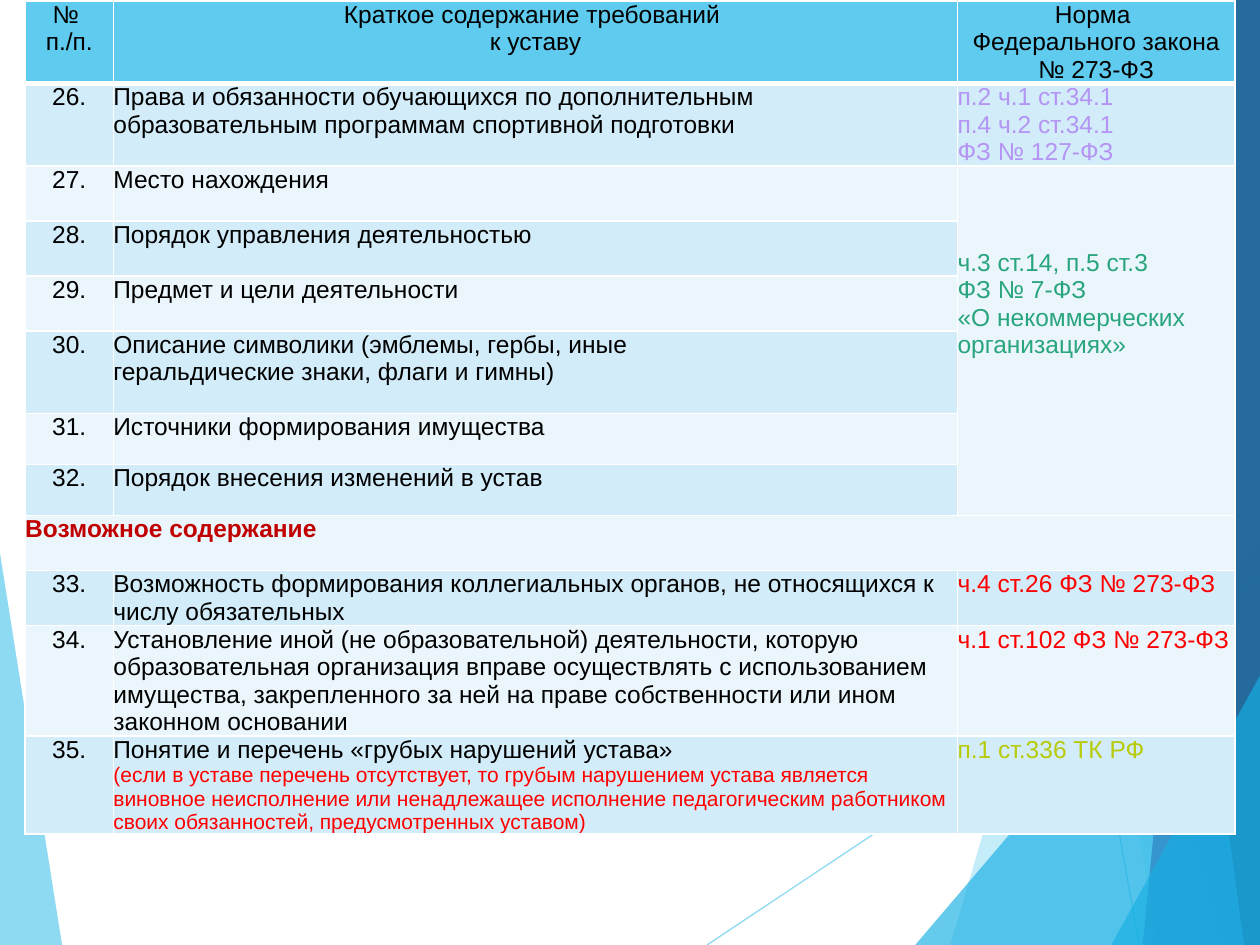
from lxml import etree
from pptx import Presentation
from pptx.dml.color import RGBColor
from pptx.enum.shapes import MSO_CONNECTOR
from pptx.enum.text import PP_ALIGN
from pptx.oxml.ns import qn
from pptx.util import Pt

CENTER, LEFT = PP_ALIGN.CENTER, PP_ALIGN.LEFT
STRAIGHT = MSO_CONNECTOR.STRAIGHT
WIDTH, HEIGHT = 720, 540
FONT = "Arial"
BLACK, WHITE, RED, DARK_RED = "000000", "FFFFFF", "FF0000", "C00000"
VIOLET, GREEN, OLIVE = "B494F4", "29A57D", "B8CA08"
SKY, AZURE, BLUE, NAVY = "5FCBEF", "17B0E4", "2E83C3", "226292"
BANDS = ("D2ECF9", "EAF6FC")
COLUMN_WIDTHS = (50.4, 482.4, 158.4)

# Facets: colour, opacity in percent, corner points
FACETS = [
    (SKY, 70, [(0, 316), (35.5, 540), (0, 540)]),
    (SKY, 36, [(702, 0), (543, 540), (720, 540), (720, 0)]),
    (SKY, 20, [(567.5, 0), (662, 540), (720, 540), (720, 0)]),
    (AZURE, 66, [(523, 540), (720, 309), (720, 540)]),
    (AZURE, 50, [(552.5, 0), (698.5, 540), (720, 540), (720, 0)]),
    (BLUE, 70, [(706, 0), (653, 540), (720, 540), (720, 0)]),
    (NAVY, 82, [(637, 0), (711, 540), (720, 540), (720, 0)]),
    (AZURE, 66, [(635, 540), (720, 386), (720, 540)]),
]
FACET_LINES = [(404, 540, 720, 329.5), (554.5, 0, 651, 540)]

# Rows: height, requirement lines, norm lines, norm colour
HEADER = (46.8, ["№ ", "п./п."], ["Краткое содержание требований ", "к уставу"],
          ["Норма ", "Федерального закона № 273-ФЗ"])
FIRST_NUMBER = 26
REQUIREMENTS = [
    (47.2, ["Права и обязанности обучающихся по дополнительным образовательным "
            "программам спортивной подготовки"],
     ["п.2 ч.1 ст.34.1", "п.4 ч.2 ст.34.1", "ФЗ № 127-ФЗ"], VIOLET),
    (31.4, ["Место нахождения"],
     ["ч.3 ст.14, п.5 ст.3", "ФЗ № 7-ФЗ", "«О некоммерческих организациях»"], GREEN),
    (31.4, ["Порядок управления деятельностью"], None, None),
    (31.4, ["Предмет и цели деятельности"], None, None),
    (47.2, ["Описание символики (эмблемы, гербы, иные ",
            "геральдические знаки, флаги и гимны)"], None, None),
    (29.2, ["Источники формирования имущества"], None, None),
    (29.2, ["Порядок внесения изменений в устав"], None, None),
    (31.4, ["Возможность формирования коллегиальных органов, не относящихся к "
            "числу обязательных"], ["ч.4 ст.26 ФЗ № 273-ФЗ"], RED),
    (62.9, ["Установление иной (не образовательной) деятельности, которую "
            "образовательная организация вправе осуществлять с использованием "
            "имущества, закрепленного за ней на праве собственности или ином "
            "законном основании"], ["ч.1 ст.102 ФЗ № 273-ФЗ"], RED),
    (56, ["Понятие и перечень «грубых нарушений устава»",
          "(если в уставе перечень отсутствует, то грубым нарушением устава "
          "является виновное неисполнение или ненадлежащее исполнение "
          "педагогическим работником своих обязанностей, предусмотренных уставом)"],
     ["п.1 ст.336 ТК РФ"], OLIVE),
]
SECTION_ROW, SECTION_HEIGHT, SECTION_TITLE = 8, 31.4, "Возможное содержание"
SHARED_NORM_ROWS = (2, 7)


def color(hex_value):
    return RGBColor.from_string(hex_value)


def set_opacity(part, percent):
    for tint in part._element.spPr.iter(qn("a:srgbClr")):
        etree.SubElement(tint, qn("a:alpha")).set("val", str(percent * 1000))


def add_facet(page, hex_value, opacity, points):
    corners = [(Pt(x), Pt(y)) for x, y in points]
    builder = page.shapes.build_freeform(*corners[0])
    builder.add_line_segments(corners[1:], close=True)
    facet = builder.convert_to_shape()
    facet.shadow.inherit = False
    facet.fill.solid()
    facet.fill.fore_color.rgb = color(hex_value)
    facet.line.fill.background()
    set_opacity(facet, opacity)


def add_facet_line(page, ends):
    line = page.shapes.add_connector(STRAIGHT, *(Pt(value) for value in ends))
    line.line.color.rgb = color(SKY)
    line.line.width = Pt(0.75)
    set_opacity(line, 70)
    etree.SubElement(line._element.spPr, qn("a:effectLst"))


def add_background(page):
    add_facet(page, *FACETS[0])
    for ends in FACET_LINES:
        add_facet_line(page, ends)
    for facet in FACETS[1:]:
        add_facet(page, *facet)


def set_borders(cell, bottom_width):
    properties = cell._tc.get_or_add_tcPr()
    sides = (("a:lnL", 1), ("a:lnR", 1), ("a:lnT", 1), ("a:lnB", bottom_width))
    for place, (tag, width) in enumerate(sides):
        border = etree.Element(qn(tag), w=str(Pt(width)))
        fill = etree.SubElement(border, qn("a:solidFill"))
        etree.SubElement(fill, qn("a:srgbClr")).set("val", WHITE)
        properties.insert(place, border)


def style_cell(cell, fill, bottom_width=1):
    cell.margin_left = cell.margin_right = cell.margin_top = cell.margin_bottom = 0
    cell.fill.solid()
    cell.fill.fore_color.rgb = color(fill)
    set_borders(cell, bottom_width)


def write(cell, lines, hex_value=BLACK, align=LEFT, bold=False):
    cell.text_frame.text = "\n".join(lines)
    for para in cell.text_frame.paragraphs:
        para.alignment = align
        for span in para.runs:
            span.font.name = FONT
            span.font.size = Pt(14)
            span.font.bold = bold
            span.font.color.rgb = color(hex_value)


def add_requirements_table(page, left, top):
    heights = [HEADER[0]] + [row[0] for row in REQUIREMENTS]
    heights.insert(SECTION_ROW, SECTION_HEIGHT)
    frame = page.shapes.add_table(len(heights), len(COLUMN_WIDTHS), Pt(left), Pt(top),
                                  Pt(sum(COLUMN_WIDTHS)), Pt(sum(heights)))
    table = frame.table
    for column, width in zip(table.columns, COLUMN_WIDTHS):
        column.width = Pt(width)
    for index, height in enumerate(heights):
        table.rows[index].height = Pt(height)
        for cell in table.rows[index].cells:
            if index == 0:
                style_cell(cell, SKY, 3)
            else:
                style_cell(cell, BANDS[(index - 1) % 2])

    # Header
    for column, lines in enumerate(HEADER[1:]):
        write(table.cell(0, column), lines, align=CENTER)

    # Merged cells
    first, last = SHARED_NORM_ROWS
    table.cell(first, 2).merge(table.cell(last, 2))
    table.cell(first, 2).margin_top = Pt(47.2)
    table.cell(SECTION_ROW, 0).merge(table.cell(SECTION_ROW, 2))
    write(table.cell(SECTION_ROW, 0), [SECTION_TITLE], DARK_RED, bold=True)

    # Numbered requirements
    for order, (_, lines, norm, norm_color) in enumerate(REQUIREMENTS):
        row = order + 1 if order + 1 < SECTION_ROW else order + 2
        write(table.cell(row, 0), [f"{FIRST_NUMBER + order}."], align=CENTER)
        write(table.cell(row, 1), lines)
        if norm:
            write(table.cell(row, 2), norm, norm_color)

    # Red remark under the last requirement
    remark = table.cell(len(heights) - 1, 1).text_frame.paragraphs[1].runs[0]
    remark.font.size = Pt(12)
    remark.font.color.rgb = color(RED)


def main():
    deck = Presentation()
    deck.slide_width, deck.slide_height = Pt(WIDTH), Pt(HEIGHT)
    page = deck.slides.add_slide(deck.slide_layouts[6])
    add_background(page)
    add_requirements_table(page, 14.4, 0.5)
    deck.save("out.pptx")


if __name__ == "__main__":
    main()
